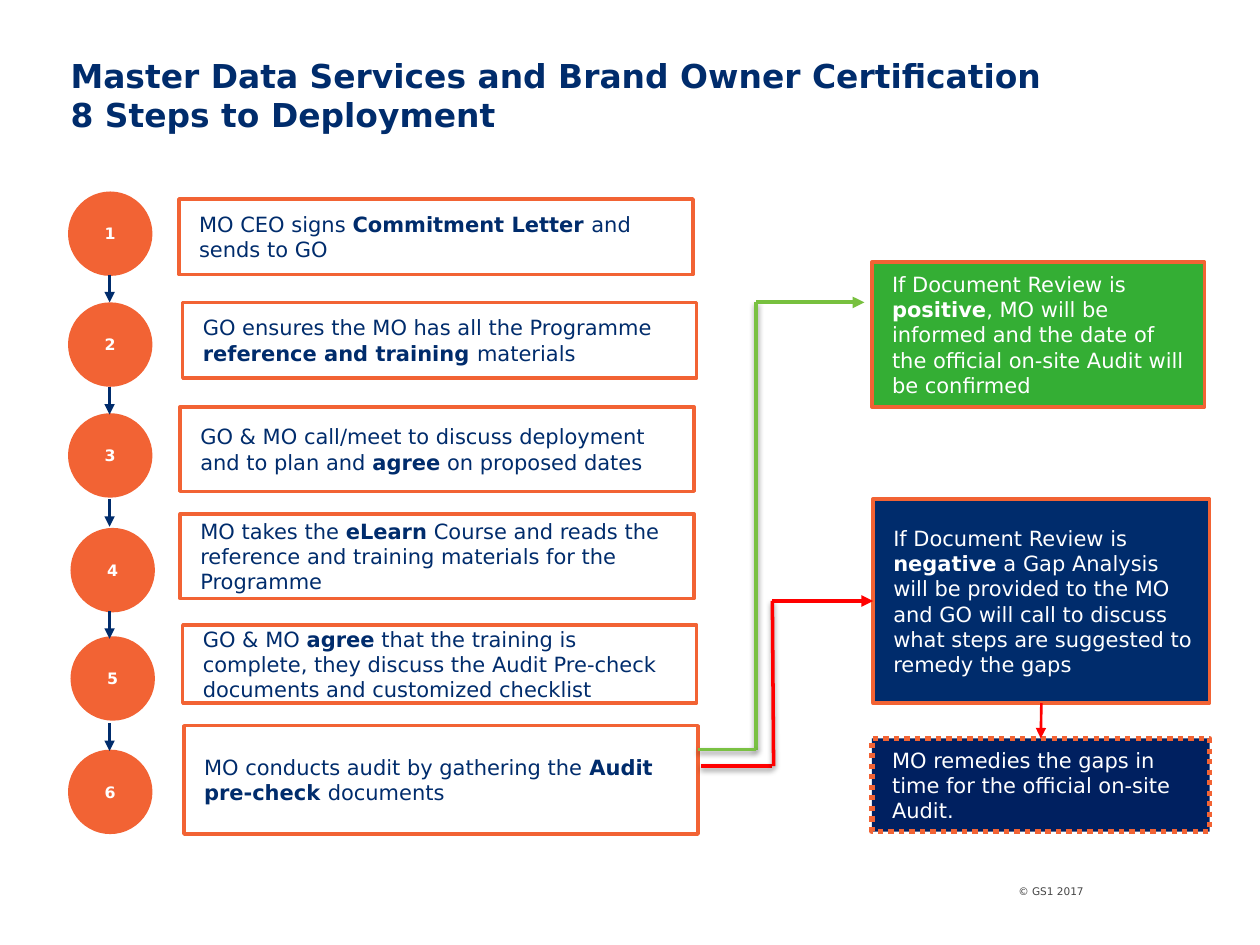
from collections import namedtuple
from dataclasses import dataclass

from lxml import etree
from pptx import Presentation
from pptx.dml.color import RGBColor
from pptx.enum.dml import MSO_LINE_DASH_STYLE as Dash
from pptx.enum.shapes import MSO_CONNECTOR as Conn, MSO_SHAPE as Shape
from pptx.enum.text import MSO_ANCHOR as Anchor, PP_ALIGN as Align
from pptx.oxml.ns import qn
from pptx.util import Inches, Pt

Box = namedtuple("Box", "left top width height")


@dataclass(frozen=True)
class Theme:
    """Colours and type sizes of the slide."""
    font: str = "DejaVu Sans"
    navy: str = "002C6C"
    midnight: str = "002060"
    orange: str = "F26334"
    green: str = "34AE34"
    lime: str = "7AC143"
    leaf: str = "77C03E"
    red: str = "FF0000"
    white: str = "FFFFFF"
    grey: str = "454545"
    title: float = 18.8
    body: float = 12
    number: float = 9
    footer: float = 6


THEME = Theme()

STEPS = [
    (0, 0, 0.88, 0.06, 0.6, "MO CEO signs **Commitment Letter **and sends to GO"),
    (0, 0.88, 0.91, 0.88, 0.6,
     "GO ensures the MO has all the Programme **reference and training **materials"),
    (0, 1.76, 0.89, 1.71, 0.67,
     "GO & MO call/meet to discuss deployment and to plan and **agree** on proposed dates"),
    (0.02, 2.67, 0.89, 2.56, 0.67,
     "MO takes the **eLearn** Course and reads the reference and training materials "
     "for the Programme"),
    (0.02, 3.53, 0.91, 3.44, 0.62,
     "GO & MO **agree** that the training is complete, they discuss the Audit Pre-check "
     "documents and customized checklist"),
    (0, 4.43, 0.92, 4.24, 0.86,
     "MO conducts audit by gathering the **Audit pre-check **documents"),
]


def set_font(p, size, color, bold=None):
    """Format a whole paragraph."""
    p.font.name, p.font.size, p.font.bold = THEME.font, Pt(size), bold
    p.font.color.rgb = RGBColor.from_string(color)


def set_frame(tf, left, right, top=0.05, bottom=0.05):
    """Set wrapping, middle anchoring and insets of a text frame."""
    tf.word_wrap, tf.vertical_anchor = True, Anchor.MIDDLE
    tf.margin_left, tf.margin_right = Inches(left), Inches(right)
    tf.margin_top, tf.margin_bottom = Inches(top), Inches(bottom)


def add_shape(s, kind, box, fill=None, line=None, weight=2):
    """Add a flat preset shape in the given box."""
    sp = s.shapes.add_shape(kind, *map(Inches, box))
    sp.shadow.inherit = False
    if fill:
        sp.fill.solid()
        sp.fill.fore_color.rgb = RGBColor.from_string(fill)
    else:
        sp.fill.background()
    if line:
        sp.line.color.rgb = RGBColor.from_string(line)
        sp.line.width = Pt(weight)
    else:
        sp.line.fill.background()
    return sp


def add_card(s, box, text, color, fill=None, weight=2):
    """Add an outlined card; text between double asterisks is bold."""
    sp = add_shape(s, Shape.RECTANGLE, box, fill, THEME.orange, weight)
    set_frame(sp.text_frame, 0.16, 0.1)
    p = sp.text_frame.paragraphs[0]
    p.alignment = Align.LEFT
    set_font(p, THEME.body, color)
    for i, part in enumerate(text.split("**")):
        r = p.add_run()
        r.text = part
        if i % 2:
            r.font.bold = True
    return sp


def add_line(s, start, end, color, weight, arrow=False, shadow=False):
    """Add a straight line with an optional arrowhead or soft shadow."""
    c = s.shapes.add_connector(Conn.STRAIGHT, *map(Inches, (*start, *end)))
    c.line.color.rgb = RGBColor.from_string(color)
    c.line.width = Pt(weight)
    if arrow:
        etree.SubElement(c.line._get_or_add_ln(), qn("a:tailEnd"), type="triangle")
    effects = etree.SubElement(c._element.spPr, qn("a:effectLst"))
    if shadow:
        outer = etree.SubElement(
            effects, qn("a:outerShdw"), blurRad=str(Pt(3.1)), dist=str(Pt(1.6)),
            dir="5400000", rotWithShape="0")
        tint = etree.SubElement(outer, qn("a:srgbClr"), val="000000")
        etree.SubElement(tint, qn("a:alpha"), val="38000")
    return c


def add_title(s, box):
    """Place and format the title placeholder."""
    sp = s.shapes.title
    sp.left, sp.top, sp.width, sp.height = map(Inches, box)
    set_frame(sp.text_frame, 0, 0.1)
    p = sp.text_frame.paragraphs[0]
    p.text = "Master Data Services and Brand Owner Certification\v8 Steps to Deployment"
    p.alignment = Align.LEFT
    set_font(p, THEME.title, THEME.navy, True)


def add_steps(s, box):
    """Add the numbered steps and return the last card."""
    size, card_width = 0.67, 4.08
    for n, (dx, dy, card_x, card_y, height, text) in enumerate(STEPS, 1):
        sp = add_shape(s, Shape.OVAL, Box(box.left + dx, box.top + dy, size, size),
                       THEME.orange)
        set_frame(sp.text_frame, 0, 0)
        p = sp.text_frame.paragraphs[0]
        p.text, p.alignment = str(n), Align.CENTER
        set_font(p, THEME.number, THEME.white, True)
        card = add_card(s, Box(box.left + card_x, box.top + card_y, card_width, height),
                        text, THEME.navy)
    x = box.left + 0.33
    for i in range(len(STEPS) - 1):
        y = box.top + 0.66 + 0.89 * i
        add_line(s, (x, y), (x, y + 0.22), THEME.navy, 1.5, arrow=True)
    return card


def add_outcomes(s, box):
    """Add the review outcomes and return the gap analysis card."""
    x, y = box.left, box.top
    add_card(s, Box(x, y, 2.64, 1.15),
             "If Document Review is **positive**, MO will be informed and the date of "
             "the official on-site Audit will be confirmed", THEME.white, THEME.green)
    gaps = add_card(s, Box(x + 0.01, y + 1.88, 2.67, 1.62),
                    "If Document Review is **negative** a Gap Analysis will be provided to "
                    "the MO and GO will call to discuss what steps are suggested to remedy "
                    "the gaps", THEME.white, THEME.navy)
    remedy = add_card(s, Box(x, y + 3.78, box.width, 0.74),
                      "MO remedies the gaps in time for the official on-site Audit.",
                      THEME.white, THEME.midnight, 3)
    remedy.line.dash_style = Dash.ROUND_DOT
    c = add_line(s, (x + 1.34, y + 3.5), (x + 1.34, y + 3.78), THEME.red, 1.5, arrow=True)
    c.begin_connect(gaps, 2)
    c.end_connect(remedy, 0)
    return gaps


def add_branches(s, box, gaps):
    """Add the green and red paths from the last step to the outcomes."""
    x, y, right, bottom = box.left, box.top, box.left + box.width, box.top + box.height
    green_y, green_x, red_x, red_y = bottom - 0.13, x + 0.46, x + 0.59, y + 2.37
    add_line(s, (green_x, green_y), (green_x, y), THEME.lime, 2, shadow=True)
    add_line(s, (x, green_y), (green_x, green_y), THEME.lime, 2, shadow=True)
    add_line(s, (green_x, y), (right - 0.07, y), THEME.leaf, 2.25, arrow=True)
    add_line(s, (x + 0.02, bottom), (red_x, bottom), THEME.red, 2.25, shadow=True)
    add_line(s, (red_x + 0.01, bottom), (red_x, red_y), THEME.red, 2, shadow=True)
    c = add_line(s, (red_x, red_y), (right, red_y), THEME.red, 2.25, arrow=True)
    c.end_connect(gaps, 1)


def add_footer(s, box):
    """Add the copyright line."""
    tf = s.shapes.add_textbox(*map(Inches, box)).text_frame
    set_frame(tf, 0, 0, 0, 0)
    tf.vertical_anchor = Anchor.TOP
    p = tf.paragraphs[0]
    p.text, p.alignment = "© GS1 2017", Align.RIGHT
    set_font(p, THEME.footer, THEME.grey)


def main():
    """Build and save the slide."""
    prs = Presentation()
    prs.slide_width, prs.slide_height = Inches(10), Inches(7.5)
    s = prs.slides.add_slide(prs.slide_layouts[5])
    add_title(s, Box(0.56, 0.23, 8.85, 1.05))
    add_steps(s, Box(0.54, 1.52, 5, 5.1))
    gaps = add_outcomes(s, Box(6.92, 2.08, 2.68, 4.52))
    add_branches(s, Box(5.54, 2.4, 1.39, 3.68), gaps)
    add_footer(s, Box(6.08, 7.02, 2.52, 0.15))
    prs.save("out.pptx")


if __name__ == "__main__":
    main()
